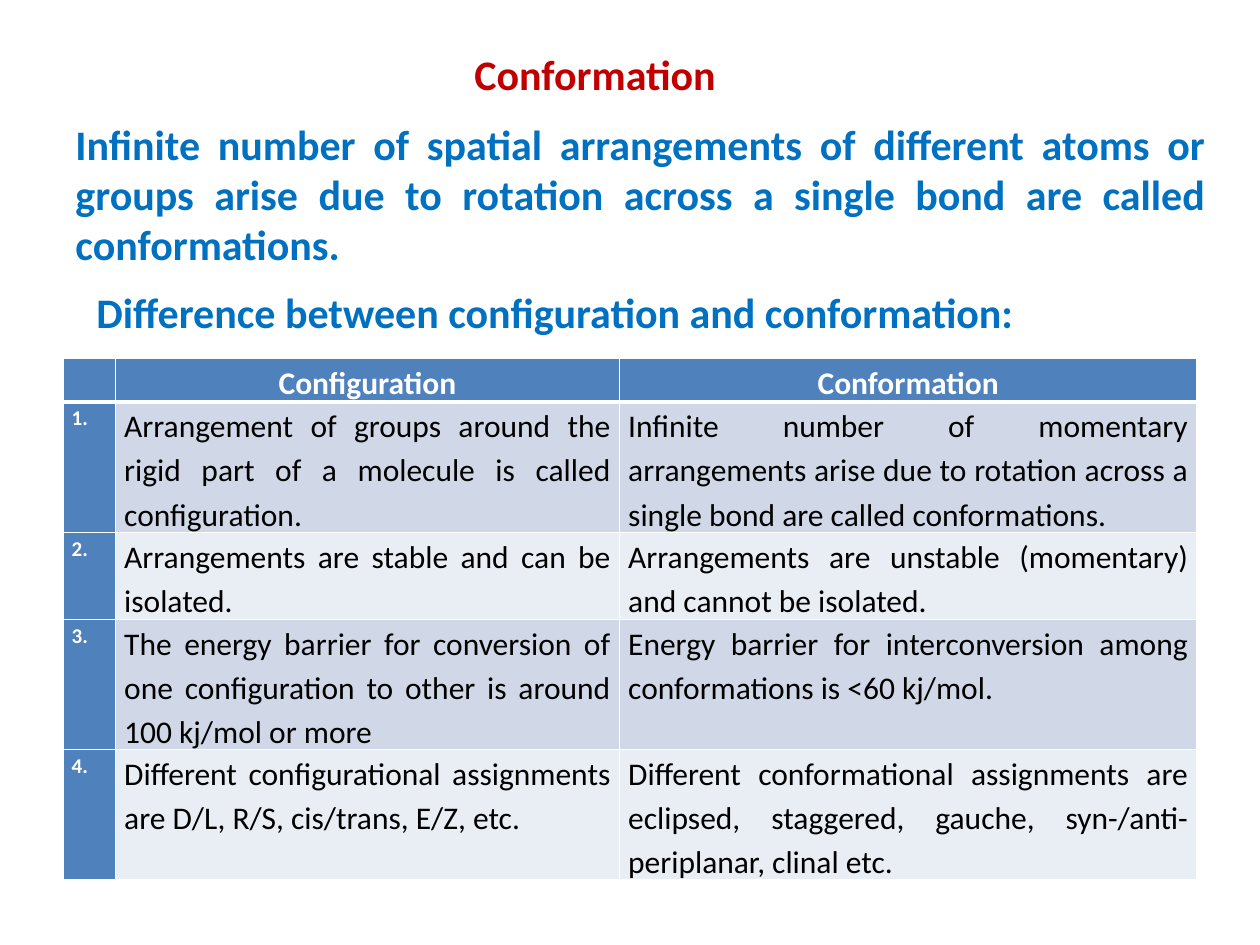
import lxml.etree
import pptx
import pptx.dml.color
import pptx.enum.text
import pptx.oxml.ns
import pptx.util

Pt = pptx.util.Pt
ALIGN = pptx.enum.text.PP_ALIGN


def style_text(para, size, color, bold, align):
    para.alignment = align
    for span in para.runs:
        span.font.name = "Calibri"
        span.font.size = Pt(size)
        span.font.bold = bold
        span.font.color.rgb = pptx.dml.color.RGBColor.from_string(color)


def add_border(cell, side, width):
    """Draw a white line on one side (L, R, T or B); call before filling the cell."""
    properties = cell._tc.get_or_add_tcPr()
    line = lxml.etree.SubElement(properties, pptx.oxml.ns.qn("a:ln" + side), w=str(Pt(width)))
    fill = lxml.etree.SubElement(line, pptx.oxml.ns.qn("a:solidFill"))
    lxml.etree.SubElement(fill, pptx.oxml.ns.qn("a:srgbClr"), val="FFFFFF")


deck = pptx.Presentation()
deck.slide_width, deck.slide_height = Pt(720), Pt(540)
page = deck.slides.add_slide(deck.slide_layouts[6])

headings = [
    ("Conformation", (264, 24, 154, 36), "C00000", ALIGN.LEFT, False),
    ("Infinite number of spatial arrangements of different atoms or groups arise "
     "due to rotation across a single bond are called conformations. ",
     (36, 64, 660, 94.5), "0070C0", ALIGN.JUSTIFY, True),
    ("Difference between configuration and conformation:",
     (48, 160, 636, 36), "0070C0", ALIGN.LEFT, True),
]
for text, bounds, color, align, wrap in headings:
    box = page.shapes.add_textbox(*[Pt(length) for length in bounds])
    box.text_frame.word_wrap = wrap
    box.text_frame.text = text
    style_text(box.text_frame.paragraphs[0], 24, color, True, align)

rows = [
    ("", "Configuration", "Conformation"),
    ("1.", "Arrangement of groups around the rigid part of a molecule is called configuration.",
     "Infinite number of momentary arrangements arise due to rotation across a single bond "
     "are called conformations."),
    ("2.", "Arrangements are stable and can be isolated.",
     "Arrangements are unstable (momentary) and cannot be isolated."),
    ("3.", "The energy barrier for conversion of one configuration to other is around "
     "100 kj/mol or more ",
     "Energy barrier for interconversion among conformations is <60 kj/mol. "),
    ("4.", "Different configurational assignments are D/L, R/S, cis/trans, E/Z, etc.",
     "Different conformational assignments are eclipsed, staggered, gauche, "
     "syn-/anti- periplanar, clinal etc."),
]
column_widths = [30, 288, 330]
row_heights = [24.8, 74.4, 49.6, 74.4, 74.4]

table = page.shapes.add_table(
    len(rows), len(column_widths), Pt(36), Pt(204.8),
    Pt(sum(column_widths)), Pt(sum(row_heights))).table
for column, width in zip(table.columns, column_widths):
    column.width = Pt(width)

for row_index, texts in enumerate(rows):
    table.rows[row_index].height = Pt(row_heights[row_index])
    is_header = row_index == 0
    for column_index, text in enumerate(texts):
        cell = table.cell(row_index, column_index)
        is_number = column_index == 0
        is_label = is_header or is_number
        cell.margin_left = cell.margin_right = Pt(5)
        cell.margin_top = cell.margin_bottom = 0

        for side in "LRTB":
            thick = (is_header and side == "B") or (row_index == 1 and side == "T")
            add_border(cell, side, 3 if thick else 1)
        band = "D0D8E8" if row_index % 2 else "E9EDF4"
        cell.fill.solid()
        cell.fill.fore_color.rgb = pptx.dml.color.RGBColor.from_string(
            "4F81BD" if is_label else band)

        if text:
            cell.text_frame.text = text
            para = cell.text_frame.paragraphs[0]
            para.line_spacing = 1.15
            style_text(para, 12 if is_number else 18, "FFFFFF" if is_label else "000000",
                       is_label, ALIGN.CENTER if is_header else ALIGN.JUSTIFY)

deck.save("out.pptx")
